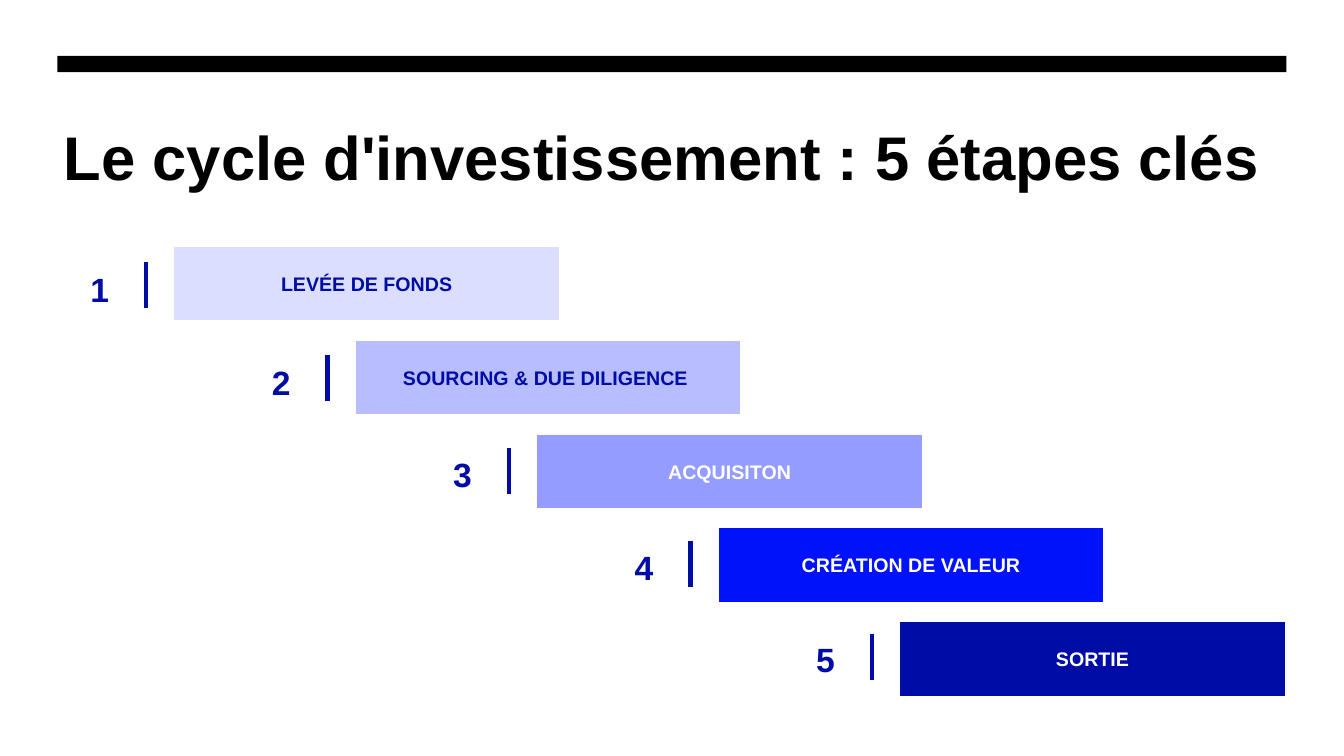
from lxml.etree import SubElement
from pptx import Presentation
from pptx.dml.color import RGBColor
from pptx.enum.shapes import MSO_CONNECTOR, MSO_SHAPE
from pptx.enum.text import MSO_ANCHOR, MSO_AUTO_SIZE, PP_ALIGN
from pptx.oxml.ns import qn
from pptx.util import Pt

COLORS = {
    "black": "000000",
    "white": "FFFFFF",
    "navy": "000CA6",
    "blue": "0012F9",
    "violet": "949CFF",
    "lilac": "B8BDFF",
    "pale": "DBDEFF",
}
TITLE = "Le cycle d'investissement : 5 étapes clés"
STEPS = [
    ("LEVÉE DE FONDS", "pale", "navy"),
    ("SOURCING & DUE DILIGENCE ", "lilac", "navy"),
    ("ACQUISITON", "violet", "white"),
    ("CRÉATION DE VALEUR", "blue", "white"),
    ("SORTIE", "navy", "white"),
]
LEFT, WIDTH = 41, 878
STEP_RIGHT = 129.6
BAR_LEFT, BAR_TOP, BAR_DOWN = 123.1, 175, 67
BAR_WIDTH, BAR_HEIGHT = 277.7, 55.4
NUMBER_LEFT, NUMBER_TOP, NUMBER_DOWN = 57.5, 188.6, 66.1
RULE_LEFT, RULE_TOP, RULE_DOWN, RULE_LENGTH = 104.4, 187.2, 66.4, 32.7


def color(name):
    return RGBColor.from_string(COLORS[name])


def write(frame, text, size, ink, align=PP_ALIGN.LEFT, anchor=MSO_ANCHOR.TOP, wrap=True):
    frame.word_wrap = wrap
    frame.vertical_anchor = anchor
    para = frame.paragraphs[0]
    para.alignment = align
    span = para.add_run()
    span.text = text
    span.font.name = "Arial"
    span.font.size = Pt(size)
    span.font.bold = True
    span.font.color.rgb = color(ink)


def add_block(page, kind, left, top, width, height, fill):
    block = page.shapes.add_shape(kind, Pt(left), Pt(top), Pt(width), Pt(height))
    block.shadow.inherit = False
    block.fill.solid()
    block.fill.fore_color.rgb = color(fill)
    block.line.fill.background()
    return block


def add_step(page, index, label, fill, ink):
    shift = index * STEP_RIGHT
    bar = add_block(page, MSO_SHAPE.RIGHT_ARROW, BAR_LEFT + shift,
                    BAR_TOP + index * BAR_DOWN, BAR_WIDTH, BAR_HEIGHT, fill)
    bar.adjustments[0] = 1
    bar.adjustments[1] = 0
    bar.line.color.rgb = color("white")
    bar.line.width = Pt(3)
    write(bar.text_frame, label, 14, ink, align=PP_ALIGN.CENTER, anchor=MSO_ANCHOR.MIDDLE)

    number = page.shapes.add_textbox(Pt(NUMBER_LEFT + shift),
                                     Pt(NUMBER_TOP + index * NUMBER_DOWN), Pt(28), Pt(36))
    write(number.text_frame, str(index + 1), 24, "navy", wrap=False)
    number.text_frame.auto_size = MSO_AUTO_SIZE.SHAPE_TO_FIT_TEXT

    across = Pt(RULE_LEFT + shift)
    top = RULE_TOP + index * RULE_DOWN
    rule = page.shapes.add_connector(MSO_CONNECTOR.STRAIGHT, across, Pt(top),
                                     across, Pt(top + RULE_LENGTH))
    rule.line.color.rgb = color("navy")
    rule.line.width = Pt(3)
    SubElement(rule._element.spPr, qn("a:effectLst"))


def main():
    deck = Presentation()
    deck.slide_width, deck.slide_height = Pt(960), Pt(540)
    page = deck.slides.add_slide(deck.slide_layouts[5])
    add_block(page, MSO_SHAPE.RECTANGLE, LEFT, 40, WIDTH, 11.5, "black")

    title = page.shapes.title
    title.left, title.top, title.width, title.height = Pt(LEFT), Pt(77), Pt(WIDTH), Pt(115)
    frame = title.text_frame
    frame.auto_size = MSO_AUTO_SIZE.NONE
    frame.margin_left = frame.margin_right = Pt(4.5)
    frame.margin_top = Pt(8)
    write(frame, TITLE, 44, "black")

    for index, step in enumerate(STEPS):
        add_step(page, index, *step)
    deck.save("out.pptx")


if __name__ == "__main__":
    main()
